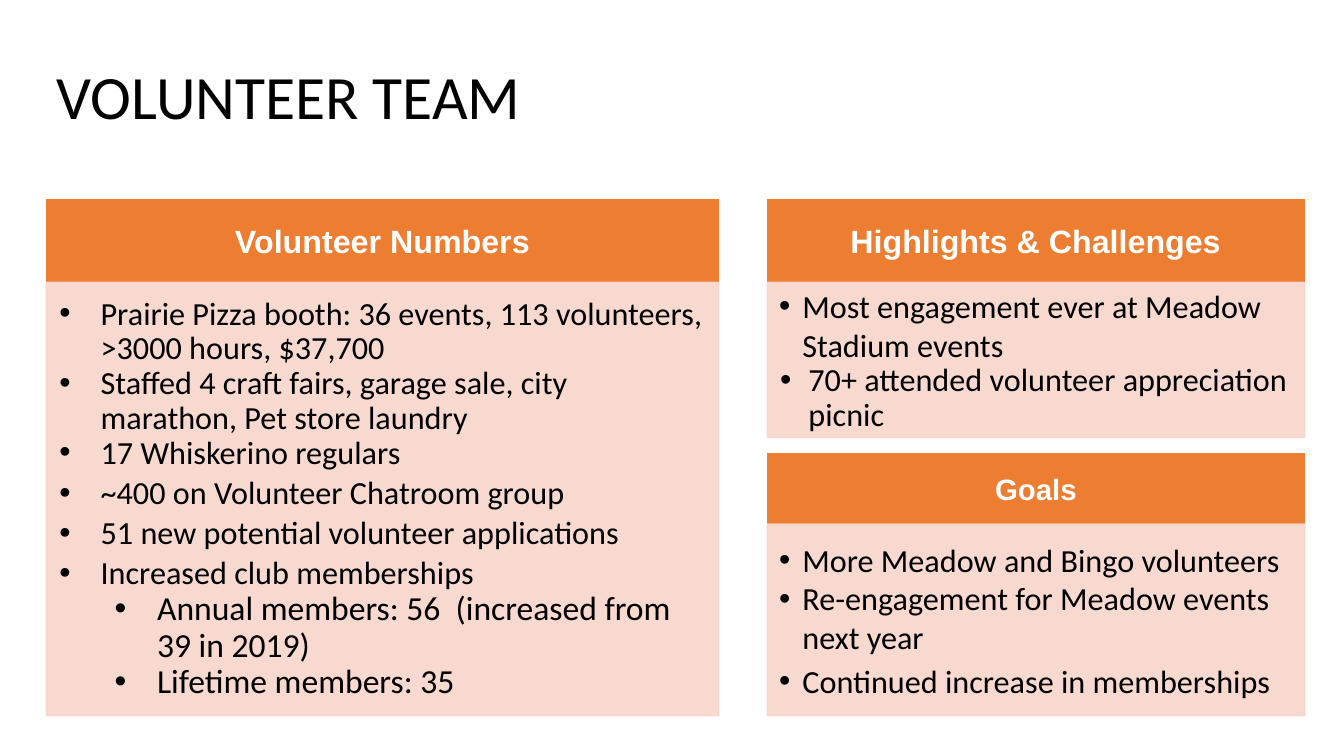
import pptx
import pptx.util
import pptx.oxml
import pptx.oxml.ns
import pptx.dml.color
import pptx.enum.shapes
import pptx.enum.text

BLACK = pptx.dml.color.RGBColor(0x00, 0x00, 0x00)
WHITE = pptx.dml.color.RGBColor(0xFF, 0xFF, 0xFF)
AMBER = pptx.dml.color.RGBColor(0xED, 0x7D, 0x31)
BLUSH = pptx.dml.color.RGBColor(0xF7, 0xD5, 0xCB)

LEFT = pptx.enum.text.PP_ALIGN.LEFT
MID = pptx.enum.text.PP_ALIGN.CENTER
RECT = pptx.enum.shapes.MSO_SHAPE.RECTANGLE
SCALE = 9144

WIDE = {"indent": (44, 41), "size": 23, "format": {"line_spacing": 0.9}}
SPACED = {**WIDE, "format": {"line_spacing": 0.9, "space_before": pptx.util.Pt(3.9)}}
NESTED = {**WIDE, "indent": (100, 42), "size": 24}
SHORT = {"indent": (25, 23), "size": 23, "format": {}}
LOOSE = {**SHORT, "format": {"space_before": pptx.util.Pt(3.9)}}
TIGHT = {**WIDE, "indent": (31, 28)}

PANELS = [
    ("Volunteer Numbers", 23, (46, 198, 667), 82, 430, [
        ("Prairie Pizza booth: 36 events, 113 volunteers, >3000 hours, $37,700", WIDE),
        ("Staffed 4 craft fairs, garage sale, city marathon, Pet store laundry", WIDE),
        ("17 Whiskerino regulars", WIDE),
        ("~400 on Volunteer Chatroom group", SPACED),
        ("51 new potential volunteer applications", SPACED),
        ("Increased club memberships", SPACED),
        ("Annual members: 56  (increased from 39 in 2019)", NESTED),
        ("Lifetime members: 35", NESTED),
    ]),
    ("Highlights & Challenges", 23, (761, 198, 533), 82, 154, [
        ("Most engagement ever at Meadow Stadium events", SHORT),
        ("70+ attended volunteer appreciation picnic", TIGHT),
    ]),
    ("Goals", 21, (761, 450, 533), 70, 190, [
        ("More Meadow and Bingo volunteers", SHORT),
        ("Re-engagement for Meadow events next year", SHORT),
        ("Continued increase in memberships", LOOSE),
    ]),
]


def apply(target, values):
    for name, value in values.items():
        setattr(target, name, value)


def px(count):
    return pptx.util.Emu(count * SCALE)


class Deck:
    body = {"name": "Calibri", "color": BLACK, "bold": False}
    head = {"name": "Arial", "color": WHITE, "bold": True}

    def __init__(self):
        self.show = pptx.Presentation()
        apply(self.show, {"slide_width": px(1333), "slide_height": px(750)})
        self.slide = self.show.slides.add_slide(self.show.slide_layouts[5])

    def frame(self, shape, inset):
        frame = shape.text_frame
        apply(frame, {
            "word_wrap": True,
            "auto_size": pptx.enum.text.MSO_AUTO_SIZE.NONE,
            "vertical_anchor": pptx.enum.text.MSO_ANCHOR.MIDDLE,
            "margin_left": px(10), "margin_right": px(10),
            "margin_top": px(inset), "margin_bottom": px(inset),
        })
        return frame

    def label(self, para, text, size, style, values):
        apply(para, values)
        run = para.add_run()
        run.text = text
        apply(run.font, {"name": style["name"], "bold": style["bold"], "size": pptx.util.Pt(size)})
        run.font.color.rgb = style["color"]

    def title(self, text):
        shape = self.slide.shapes.title
        apply(shape, {"left": px(46), "top": px(26), "width": px(1150), "height": px(145)})
        para = self.frame(shape, 5).paragraphs[0]
        self.label(para, text, 44, self.body, {"alignment": LEFT, "line_spacing": 0.9})

    def box(self, left, top, width, height, color, alpha=100):
        shape = self.slide.shapes.add_shape(RECT, px(left), px(top), px(width), px(height))
        shape.shadow.inherit = False
        shape.line.width = pptx.util.Pt(1)
        for fill in (shape.fill, shape.line.fill):
            fill.solid()
            fill.fore_color.rgb = color
        if alpha < 100:
            space = pptx.oxml.ns.nsdecls("a")
            for tint in shape._element.spPr.iter(pptx.oxml.ns.qn("a:srgbClr")):
                tint.append(pptx.oxml.parse_xml(f'<a:alpha {space} val="{alpha * 1000}"/>'))
        return self.frame(shape, 10)

    def bullet(self, para, left, hang):
        props = para._p.get_or_add_pPr()
        props.set("marL", str(px(left)))
        props.set("indent", str(-px(hang)))
        space = pptx.oxml.ns.nsdecls("a")
        for xml in (
            f'<a:buClr {space}><a:srgbClr val="{BLACK}"/></a:buClr>',
            f'<a:buFont {space} typeface="Arial"/>',
            f'<a:buChar {space} char="•"/>',
        ):
            props.append(pptx.oxml.parse_xml(xml))

    def panel(self, name, size, spot, cap, depth, items):
        left, top, width = spot
        frame = self.box(left, top, width, cap, AMBER)
        self.label(frame.paragraphs[0], name, size, self.head, {"alignment": MID})
        frame = self.box(left, top + cap, width, depth, BLUSH, 90)
        for index, (text, kind) in enumerate(items):
            para = frame.add_paragraph() if index else frame.paragraphs[0]
            self.bullet(para, *kind["indent"])
            values = {"alignment": LEFT, "level": 1, **kind["format"]}
            self.label(para, text, kind["size"], self.body, values)


def main():
    deck = Deck()
    deck.title("VOLUNTEER TEAM")
    for panel in PANELS:
        deck.panel(*panel)
    deck.show.save("out.pptx")


if __name__ == "__main__":
    main()
